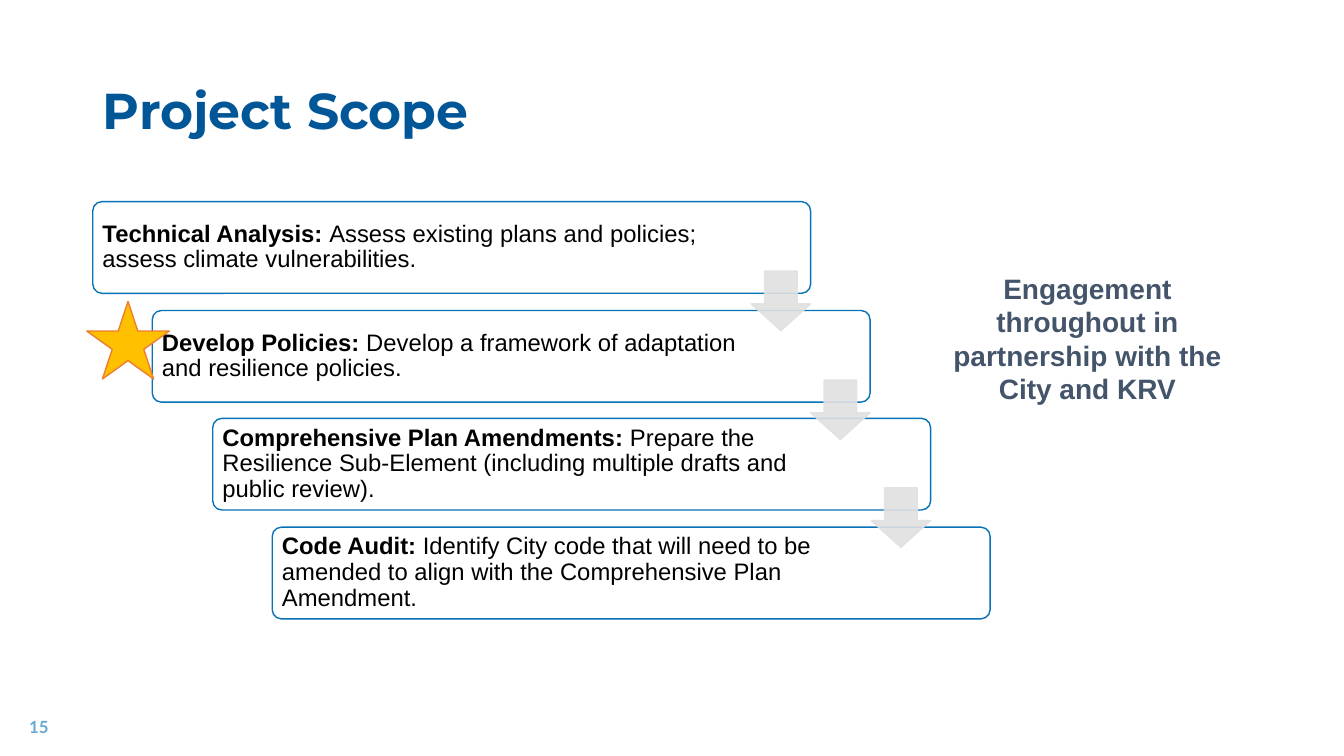
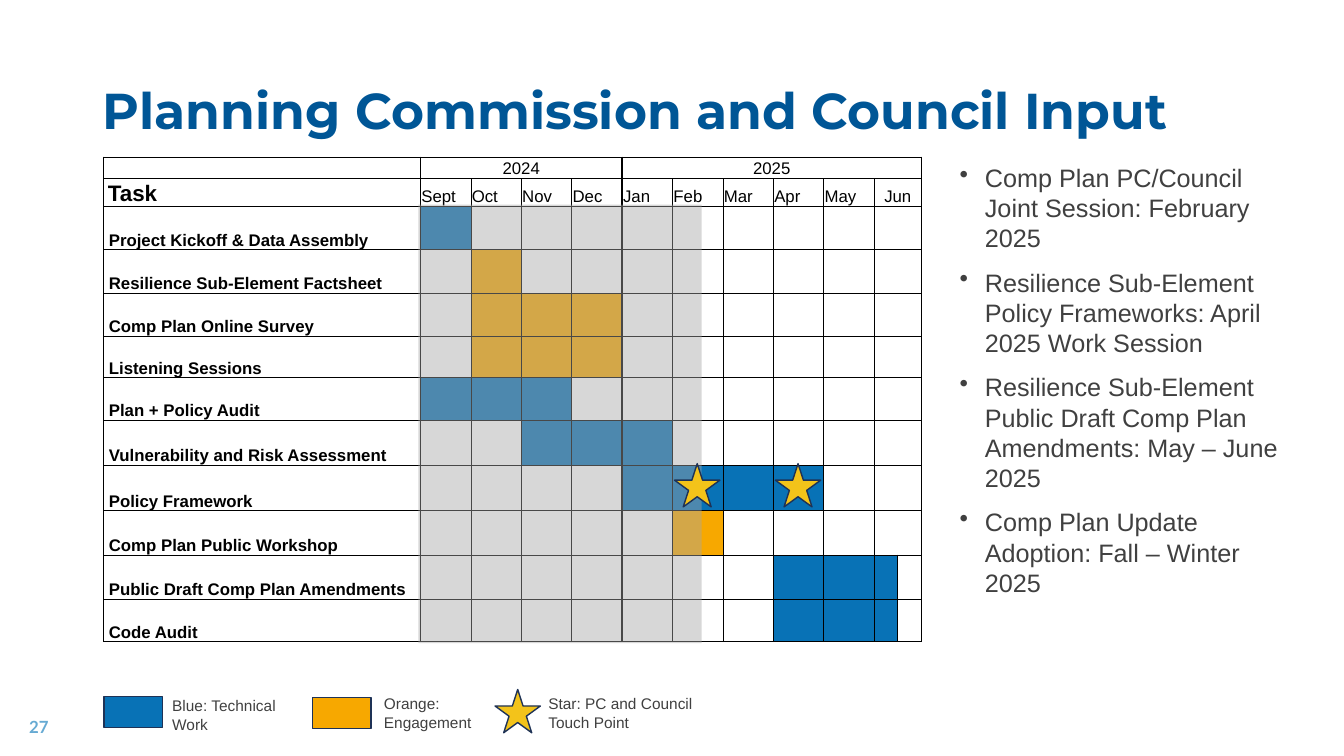
import lxml.etree
import pptx
import pptx.dml.color
import pptx.enum.shapes
import pptx.enum.text
import pptx.oxml.ns
import pptx.util

RGB = pptx.dml.color.RGBColor
SHAPE = pptx.enum.shapes.MSO_SHAPE
ALIGN = pptx.enum.text.PP_ALIGN
ANCHOR = pptx.enum.text.MSO_ANCHOR
qn = pptx.oxml.ns.qn

# Colours
NAVY = RGB(0x00, 0x56, 0x96)
SKY = RGB(0x66, 0xAA, 0xD3)
BLUE = RGB(0x08, 0x72, 0xB6)
ORANGE = RGB(0xF7, 0xA8, 0x00)
YELLOW = RGB(0xF3, 0xC3, 0x1A)
GOLD = RGB(0xFF, 0xC0, 0x00)
RUST = RGB(0xED, 0x7D, 0x31)
INK = RGB(0x1E, 0x32, 0x56)
SLATE = RGB(0x44, 0x54, 0x6A)
DARK = RGB(0x40, 0x40, 0x40)
GRAY = RGB(0xA6, 0xA6, 0xA6)
PALE = RGB(0xE1, 0xE1, 0xE1)
BLACK = RGB(0, 0, 0)

# Text looks
TITLE = {"name": "Montserrat", "size": pptx.util.Pt(36), "bold": True}
PAGE = {"name": "Lato", "size": pptx.util.Pt(12), "bold": True}


def px(num):
    return pptx.util.Emu(num * 9144)


def arial(size, bold=False):
    return {"name": "Arial", "size": pptx.util.Pt(size), "bold": bold}


def style(item, form):
    for name, value in form.items():
        setattr(item, name, value)


def pads(left, top, right, bottom):
    return {"margin_left": px(left), "margin_top": px(top),
            "margin_right": px(right), "margin_bottom": px(bottom)}


def add(node, tag, **attrs):
    return lxml.etree.SubElement(node, qn(tag), attrs)


def write(frame, lines, look, ink, form=None, bullet=False):
    """Each line is a list of (text, bold) runs, or plain text."""
    for num, line in enumerate(lines):
        para = frame.add_paragraph() if num else frame.paragraphs[0]
        if bullet:
            props = para._p.get_or_add_pPr()
            props.set("marL", str(px(25)))
            props.set("indent", str(px(-25)))
            add(props, "a:buChar", char="•")
        style(para, form or {})
        if num:
            para.space_before = pptx.util.Pt(10)
        for text, bold in [(line, look["bold"])] if isinstance(line, str) else line:
            run = para.add_run()
            run.text = text
            style(run.font, {**look, "bold": bold})
            run.font.color.rgb = ink


def label(slide, box, lines, look, ink, form=None, anchor=ANCHOR.TOP, bullet=False):
    frame = slide.shapes.add_textbox(*map(px, box)).text_frame
    style(frame, {"word_wrap": True, "vertical_anchor": anchor})
    write(frame, lines, look, ink, form, bullet)


def draw(slide, kind, box, fill=None, edge=None, alpha=None):
    shape = slide.shapes.add_shape(kind, *map(px, box))
    shape.shadow.inherit = False
    if fill is None:
        shape.fill.background()
    else:
        shape.fill.solid()
        shape.fill.fore_color.rgb = fill
    if edge is None:
        shape.line.fill.background()
    else:
        shape.line.color.rgb = edge
        shape.line.width = pptx.util.Pt(1)
    if alpha:
        for tint in shape.element.spPr.iter(qn("a:srgbClr")):
            add(tint, "a:alpha", val=str(alpha * 1000))
    return shape


def start(deck, title, page):
    slide = deck.slides.add_slide(deck.slide_layouts[5])
    head = slide.shapes.title
    style(head, dict(zip(("left", "top", "width", "height"),
                         map(px, (92, 40, 1150, 145)))))
    style(head.text_frame, {"word_wrap": True, "vertical_anchor": ANCHOR.MIDDLE})
    write(head.text_frame, [title], TITLE, NAVY,
          {"alignment": ALIGN.LEFT, "line_spacing": 0.9})
    label(slide, (19, 701, 300, 40), [page], PAGE, SKY, anchor=ANCHOR.MIDDLE)
    return slide


# Project steps
STEPS = [
    ("Technical Analysis: ",
     "Assess existing plans and policies; assess climate vulnerabilities."),
    ("Develop Policies: ",
     "Develop a framework of adaptation and resilience policies."),
    ("Comprehensive Plan Amendments: ",
     "Prepare the Resilience Sub-Element (including multiple drafts and public review)."),
    ("Code Audit: ",
     "Identify City code that will need to be amended to align with the "
     "Comprehensive Plan Amendment."),
]


def shift(num, left, top):
    return left + round(num * 59.3), top + round(num * 107.7)


def scope(deck):
    slide = start(deck, "Project Scope", "15")
    for num, (name, text) in enumerate(STEPS):
        step = draw(slide, SHAPE.ROUNDED_RECTANGLE,
                    (*shift(num, 92, 200), 712, 91), edge=BLUE)
        step.adjustments[0] = 0.1
        style(step.text_frame, {"word_wrap": True, "vertical_anchor": ANCHOR.MIDDLE,
                                **pads(7, 4, 108, 4)})
        write(step.text_frame, [[(name, True), (text, False)]], arial(17), BLACK,
              {"alignment": ALIGN.LEFT, "line_spacing": 0.9})
    for num in range(len(STEPS) - 1):
        arrow = draw(slide, SHAPE.DOWN_ARROW, (*shift(num, 745, 269), 59, 59),
                     PALE, PALE, 90)
        arrow.adjustments[0], arrow.adjustments[1] = 0.55, 0.45
    label(slide, (924, 264, 309, 145),
          ["Engagement throughout in partnership with the City and KRV"],
          arial(20, True), SLATE, {"alignment": ALIGN.CENTER})
    draw(slide, SHAPE.STAR_5_POINT, (86, 299, 82, 77), GOLD, RUST)


# Schedule: task, row height, colour, first and last column
TASKS = [
    ("Project Kickoff & Data Assembly", 43, BLUE, 1, 1),
    ("Resilience Sub-Element Factsheet", 43, ORANGE, 2, 2),
    ("Comp Plan Online Survey", 43, ORANGE, 2, 4),
    ("Listening Sessions", 41, ORANGE, 2, 4),
    ("Plan + Policy Audit", 42, BLUE, 1, 3),
    ("Vulnerability and Risk Assessment", 45, BLUE, 3, 5),
    ("Policy Framework", 45, BLUE, 5, 8),
    ("Comp Plan Public Workshop", 44, ORANGE, 6, 6),
    ("Public Draft Comp Plan Amendments", 44, BLUE, 8, 10),
    ("Code Audit", 42, BLUE, 8, 10),
]
MONTHS = ["Sept", "Oct", "Nov", "Dec", "Jan", "Feb", "Mar", "Apr", "May", "Jun"]
COLS = [314] + [50] * 9 + [23, 24]
ROWS = [21, 26] + [task[1] for task in TASKS]
BOLD_COLS = (0, 1, 5, len(COLS))
BOLD_ROWS = (0, len(ROWS))


def border(cell, row, col):
    wide = cell.span_width if cell.is_merge_origin else 1
    heavy = {"L": col in BOLD_COLS, "R": col + wide in BOLD_COLS,
             "T": row in BOLD_ROWS, "B": row + 1 in BOLD_ROWS}
    props = cell._tc.get_or_add_tcPr()
    for num, (side, bold) in enumerate(heavy.items()):
        line = add(props, "a:ln" + side, w="12700" if bold else "6350")
        add(add(line, "a:solidFill"), "a:srgbClr", val=str(BLACK))
        props.insert(num, line)


def enter(cell, text, look, align=ALIGN.LEFT, left=1):
    cell.margin_left = px(left)
    write(cell.text_frame, [text], look, BLACK, {"alignment": align})


def chart(slide):
    table = slide.shapes.add_table(len(ROWS), len(COLS), px(103), px(156),
                                   px(sum(COLS)), px(sum(ROWS))).table
    style(table, {"first_row": False, "horz_banding": False})
    for col, wide in zip(table.columns, COLS):
        col.width = px(wide)
    for row, high in zip(table.rows, ROWS):
        row.height = px(high)
    cell = table.cell

    # Merged cells
    cell(0, 1).merge(cell(0, 4))
    cell(0, 5).merge(cell(0, 11))
    cell(1, 10).merge(cell(1, 11))
    for row, task in enumerate(TASKS, 2):
        if task[4] < 10:
            cell(row, 10).merge(cell(row, 11))

    # Plain grid
    for row in range(len(ROWS)):
        for col in range(len(COLS)):
            box = cell(row, col)
            style(box, {"vertical_anchor": ANCHOR.BOTTOM, **pads(1, 1, 1, 0)})
            box.fill.background()
            border(box, row, col)
            add(box.text_frame.paragraphs[0]._p, "a:endParaRPr", sz="1200")

    # Headings, tasks and bars
    enter(cell(0, 1), "2024", arial(12), ALIGN.CENTER)
    enter(cell(0, 5), "2025", arial(12), ALIGN.CENTER)
    enter(cell(1, 0), "Task", arial(16, True), left=4)
    for col, month in enumerate(MONTHS, 1):
        enter(cell(1, col), month, arial(12),
              ALIGN.CENTER if month == "Jun" else ALIGN.LEFT)
    for row, (name, _, tint, first, last) in enumerate(TASKS, 2):
        enter(cell(row, 0), name, arial(12, True), left=5)
        for col in range(first, last + 1):
            fill = cell(row, col).fill
            fill.solid()
            fill.fore_color.rgb = tint


NOTES = [
    "Comp Plan PC/Council Joint Session: February 2025",
    "Resilience Sub-Element Policy Frameworks: April 2025 Work Session",
    "Resilience Sub-Element Public Draft Comp Plan Amendments: May – June 2025",
    "Comp Plan Update Adoption: Fall – Winter 2025",
]
# Legend: shape, its box, colour, text, text box
KEYS = [
    (SHAPE.RECTANGLE, (103, 691, 58, 31), BLUE,
     "Blue: Technical Work", (161, 686, 134, 46)),
    (SHAPE.RECTANGLE, (310, 692, 58, 31), ORANGE,
     "Orange: Engagement", (371, 684, 150, 63)),
    (SHAPE.STAR_5_POINT, (491, 684, 45, 43), YELLOW,
     "Star: PC and Council Touch Point", (534, 684, 164, 49)),
]


def plan(deck):
    slide = start(deck, "Planning Commission and Council Input", "27")
    label(slide, (942, 156, 339, 444), NOTES, arial(18), DARK, bullet=True)
    chart(slide)
    # Elapsed time and touch points
    draw(slide, SHAPE.RECTANGLE, (415, 203, 281, 435), GRAY, alpha=44)
    for left in (669, 769):
        draw(slide, SHAPE.STAR_5_POINT, (left, 460, 45, 43), YELLOW, INK)
    for kind, box, tint, text, area in KEYS:
        draw(slide, kind, box, tint, INK)
        label(slide, area, [text], arial(11), DARK)


def main():
    deck = pptx.Presentation()
    style(deck, {"slide_width": px(1333), "slide_height": px(750)})
    scope(deck)
    plan(deck)
    deck.save("out.pptx")


if __name__ == "__main__":
    main()
